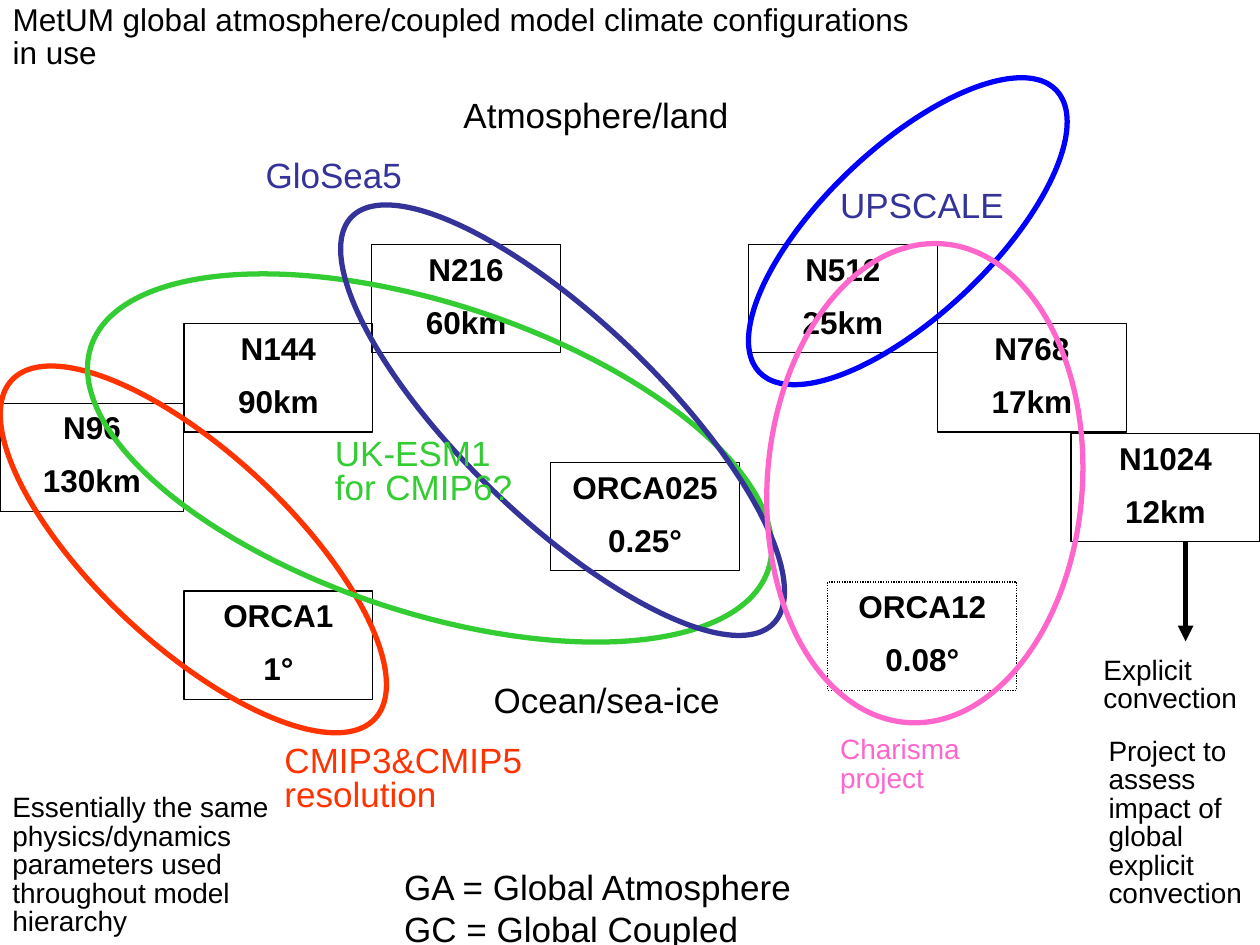
from pptx import Presentation
from pptx.dml.color import RGBColor as RGB
from pptx.enum.dml import MSO_LINE_DASH_STYLE as Dash
from pptx.enum.shapes import MSO_CONNECTOR as Link, MSO_SHAPE as Kind
from pptx.enum.text import MSO_ANCHOR as Anchor, MSO_AUTO_SIZE as Auto, PP_ALIGN as Align
from pptx.oxml.ns import qn
from pptx.util import Inches, Pt
from lxml.etree import SubElement

TITLE = "MetUM global atmosphere/coupled model climate configurations in use"

# name, grid size, left, top, width, dash
MODELS = [
    ("N96", "130km", 0, 3.2, 1.46, None),
    ("N144", "90km", 1.46, 2.57, 1.5, None),
    ("N216", "60km", 2.95, 1.94, 1.5, None),
    ("N512", "25km", 5.94, 1.94, 1.5, None),
    ("N768", "17km", 7.44, 2.57, 1.5, None),
    ("N1024", "12km", 8.5, 3.44, 1.5, None),
    ("ORCA1", "1°", 1.46, 4.69, 1.5, None),
    ("ORCA025", "0.25°", 4.37, 3.67, 1.5, None),
    ("ORCA12", "0.08°", 6.57, 4.62, 1.5, Dash.ROUND_DOT),
]
BOX_H = 0.86

# colour, (left, top, width, height), rotation
RINGS = [
    ("red", (0.77, 2.39, 1.53, 3.94), 313),
    ("green", (0.58, 2.41, 5.66, 2.45), 18.2),
    ("navy", (2.14, 2.55, 4.65, 1.57), 43.9),
    ("blue", (5.58, 1.17, 3.25, 1.33), 316.5),
    ("pink", (6.09, 1.93, 2.5, 3.81), 4.3),
]

# text, colour, (left, top, width, height)
NOTES = [
    ("Essentially the same physics/dynamics parameters used throughout model hierarchy",
     "black", (0, 6.26, 2.61, 1.24)),
    ("Explicit convection", "black", (8.66, 5.17, 1.34, 0.56)),
    ("Charisma project", "pink", (6.57, 5.8, 1.34, 0.57)),
    ("Project to assess impact of global explicit convection",
     "black", (8.7, 5.81, 1.3, 1.47)),
]
LABELS = [
    ("Ocean/sea-ice", "black", (3.82, 5.4, 2.28, 0.37)),
    ("Atmosphere/land", "black", (3.58, 0.76, 2.91, 0.37)),
    ("GloSea5", "navy", (2.01, 1.23, 1.42, 0.37)),
    ("UPSCALE", "navy", (6.57, 1.47, 1.57, 0.37)),
    ("UK-ESM1 for CMIP6?", "green", (2.56, 3.44, 1.7, 0.65)),
    ("CMIP3&CMIP5 resolution", "red", (2.16, 5.88, 2.13, 0.65)),
]
KEY = ["GA = Global Atmosphere", "GC = Global Coupled"]
KEY_AT = (3.11, 6.82, 3.7, 0.77)
ARROW = (9.41, 4.3, 9.41, 5.09)

THEME = {
    "font": "Arial",
    "color": {name: RGB.from_string(code) for name, code in {
        "black": "000000", "white": "FFFFFF", "red": "FF3300", "green": "33CC33",
        "navy": "333399", "blue": "0000FF", "pink": "FF66CC"}.items()},
    "size": {"title": Pt(18), "model": Pt(18), "note": Pt(16), "label": Pt(20)},
    "thin": Pt(0.75), "thick": Pt(3),
}
COLOR = THEME["color"]


def put(item, values):
    for name, value in values.items():
        setattr(item, name, value)


def inch(nums):
    return [Inches(n) for n in nums]


def write(shape, lines, role, color="black", bold=False, frame=None, para=None, gap=0):
    """Fill a shape with paragraphs; gap is the space between them in points."""
    text = shape.text_frame
    put(text, {"word_wrap": True, "auto_size": Auto.NONE,
               "vertical_anchor": Anchor.TOP, **(frame or {})})
    for i, line in enumerate(lines):
        p = text.paragraphs[0] if i == 0 else text.add_paragraph()
        put(p, {"alignment": Align.LEFT, **(para or {})})
        if i and gap:
            p.space_before = Pt(gap)
        run = p.add_run()
        run.text = line
        put(run.font, {"name": THEME["font"], "size": THEME["size"][role], "bold": bold})
        run.font.color.rgb = COLOR[color]


def paint(shape):
    shape.fill.solid()
    shape.fill.fore_color.rgb = COLOR["white"]


def outline(slide, kind, at, color, width):
    shape = slide.shapes.add_shape(kind, *inch(at))
    shape.shadow.inherit = False
    shape.fill.background()
    shape.line.color.rgb = COLOR[color]
    shape.line.width = width
    return shape


def arrow(slide, ends):
    line = slide.shapes.add_connector(Link.STRAIGHT, *inch(ends))
    line.line.color.rgb = COLOR["black"]
    line.line.width = THEME["thick"]
    SubElement(line.line._get_or_add_ln(), qn("a:tailEnd"), type="triangle")
    SubElement(line._element.spPr, qn("a:effectLst"))


def main():
    deck = Presentation()
    put(deck, {"slide_width": Inches(10), "slide_height": Inches(7.5)})
    slide = deck.slides.add_slide(deck.slide_layouts[5])

    title = slide.shapes.title
    put(title, dict(zip(("left", "top", "width", "height"), inch((0, 0, 7.5, 0.78)))))
    paint(title)
    write(title, [TITLE], "title", para={"line_spacing": 0.85})

    for name, grid, left, top, width, dash in MODELS:
        box = outline(slide, Kind.RECTANGLE, (left, top, width, BOX_H),
                      "black", THEME["thin"])
        if dash:
            box.line.dash_style = dash
        write(box, [name, grid], "model", bold=True, gap=13,
              frame={"word_wrap": False, "vertical_anchor": Anchor.MIDDLE},
              para={"alignment": Align.CENTER, "line_spacing": 0.8})

    for color, at, turn in RINGS:
        outline(slide, Kind.OVAL, at, color, THEME["thick"]).rotation = turn

    arrow(slide, ARROW)
    for role, items, pitch in (("note", NOTES, 0.85), ("label", LABELS, 0.8)):
        for text, color, at in items:
            box = slide.shapes.add_textbox(*inch(at))
            if role == "note":
                paint(box)
            write(box, [text], role, color, para={"line_spacing": pitch})

    write(slide.shapes.add_textbox(*inch(KEY_AT)), KEY, "label")
    deck.save("out.pptx")


if __name__ == "__main__":
    main()
